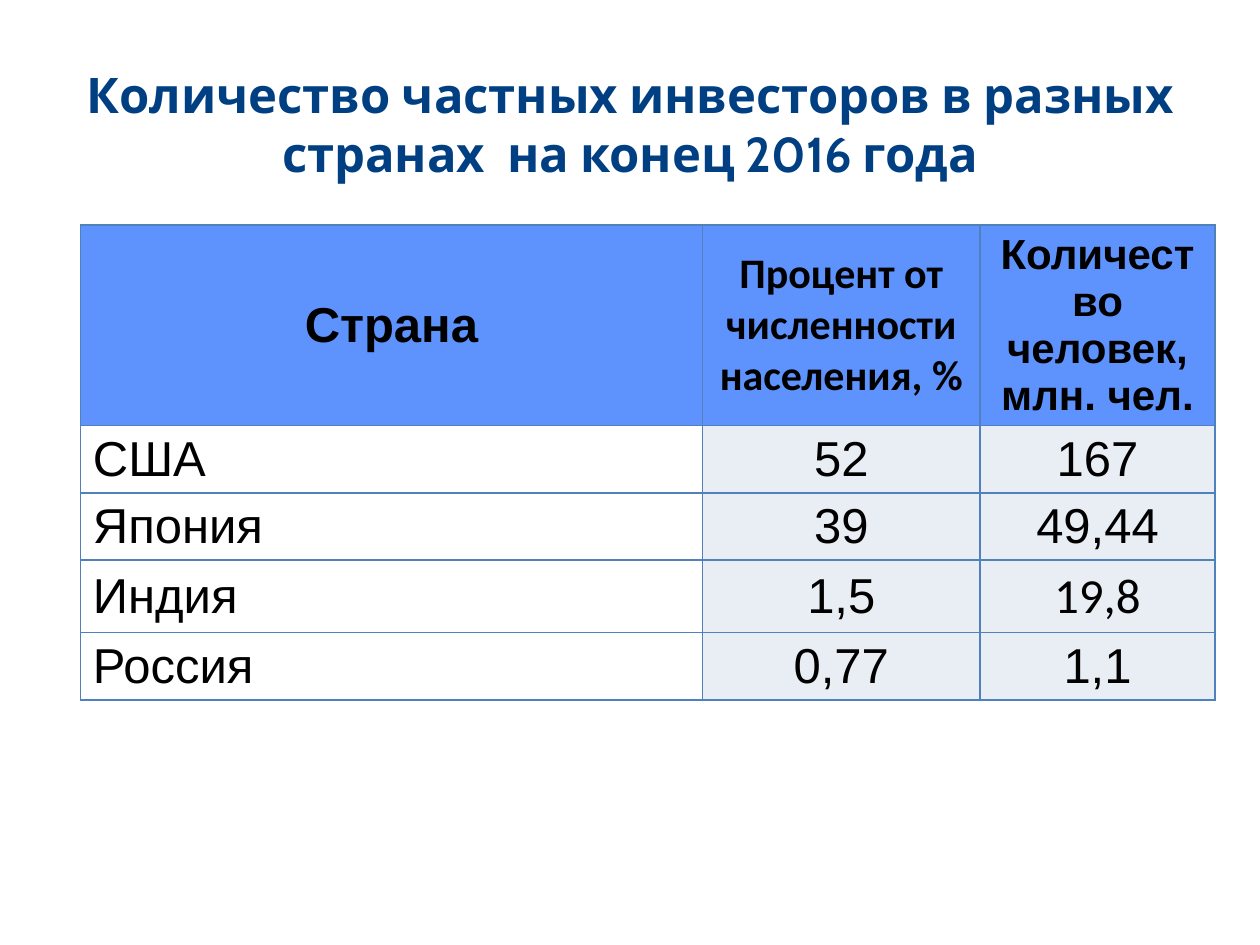
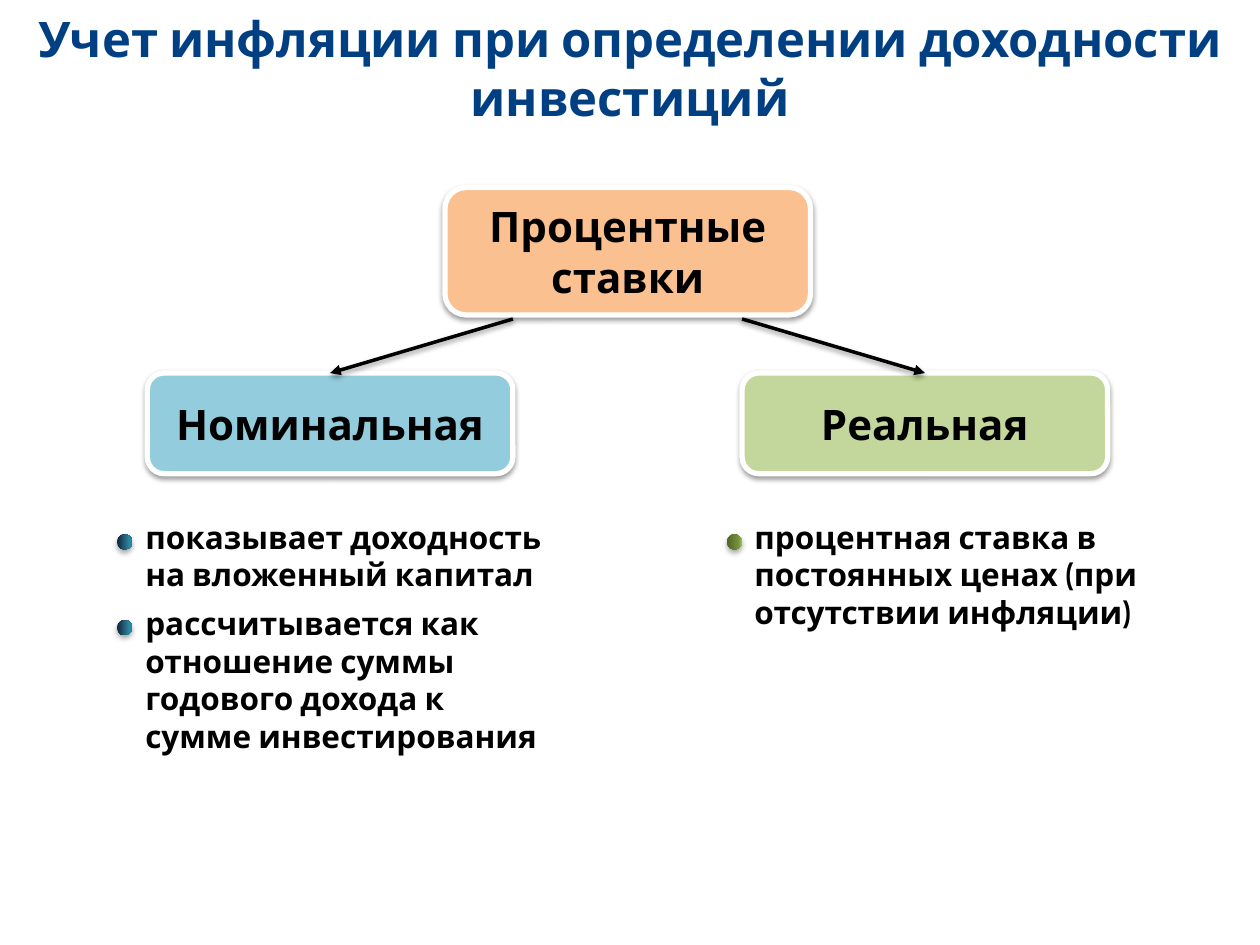
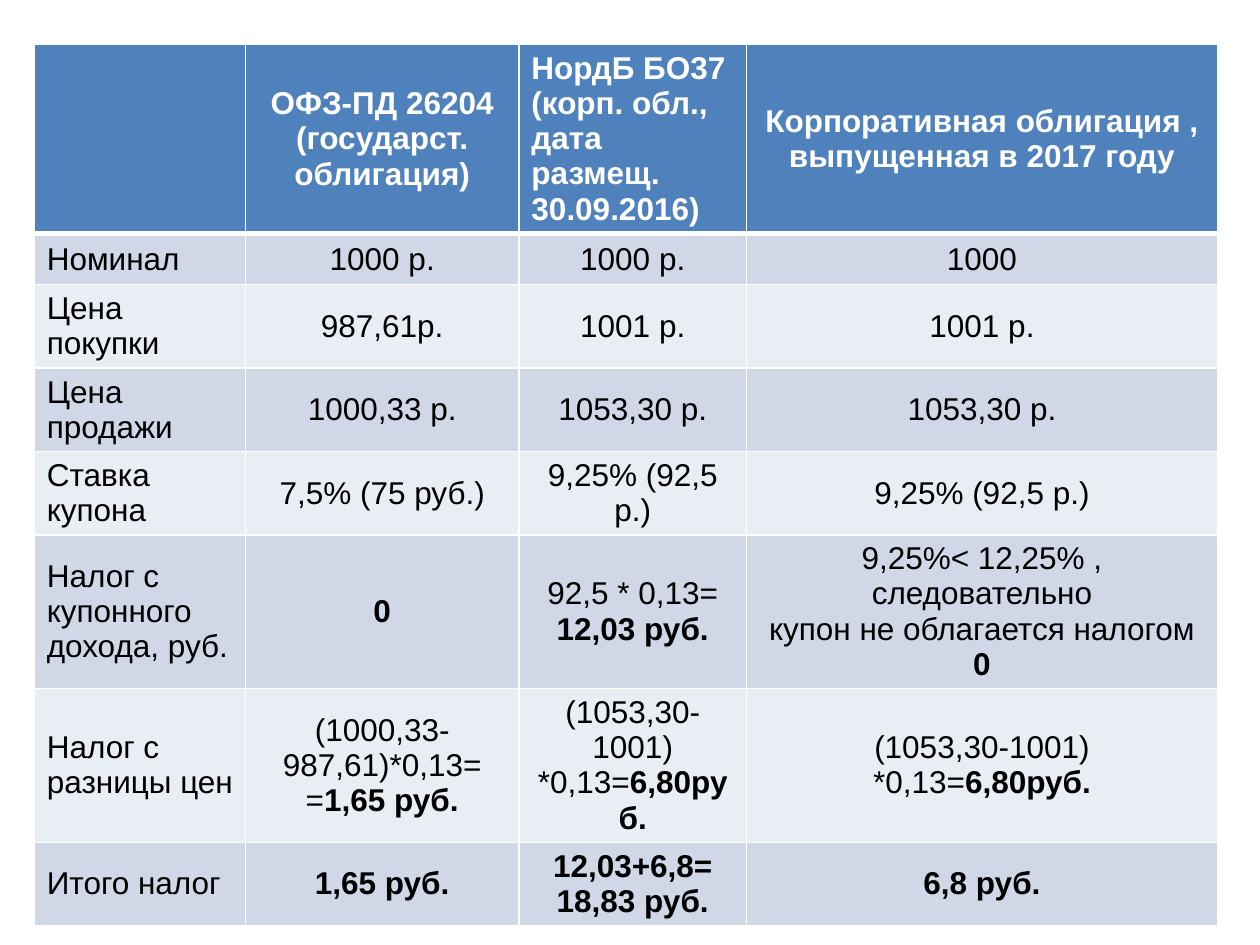
from dataclasses import dataclass

from lxml import etree
from pptx import Presentation
from pptx.dml.color import RGBColor
from pptx.enum.shapes import MSO_CONNECTOR, MSO_SHAPE
from pptx.enum.text import MSO_ANCHOR, MSO_AUTO_SIZE, PP_ALIGN
from pptx.oxml.ns import qn
from pptx.util import Cm, Pt

LEFT, CENTER = PP_ALIGN.LEFT, PP_ALIGN.CENTER
TOP, MIDDLE = MSO_ANCHOR.TOP, MSO_ANCHOR.MIDDLE
NO_AUTOFIT = MSO_AUTO_SIZE.NONE
ROUNDED, OVAL = MSO_SHAPE.ROUNDED_RECTANGLE, MSO_SHAPE.OVAL
STRAIGHT = MSO_CONNECTOR.STRAIGHT
TITLE_ONLY, BLANK = 5, 6
TOP_SIDE = 0
BOLD_MARK = "|"


@dataclass(frozen=True)
class Theme:
    title_font: str = "Cabin"
    table_font: str = "Arial"
    accent_font: str = "Calibri"
    title_size: int = 28
    box_size: int = 24
    text_size: int = 18
    navy: str = "003F82"
    black: str = "000000"
    white: str = "FFFFFF"
    header: str = "5E93FE"
    blue: str = "4F81BD"
    band: str = "D0D8E8"
    pale: str = "E9EDF4"
    orange: str = "FAC090"
    aqua: str = "93CDDD"
    green: str = "C3D69B"
    aqua_dot: tuple = ((0, "0F243E"), (80, "31859C"), (100, "038CC9"))
    green_dot: tuple = ((0, "4F6228"), (80, "77933C"), (100, "92D050"))


def rgb(value):
    return RGBColor.from_string(value)


def child(parent, tag, **attributes):
    return etree.SubElement(parent, qn(tag), {k: str(v) for k, v in attributes.items()})


class Deck:
    def __init__(self, theme):
        self.theme = theme
        self.presentation = Presentation()
        self.presentation.slide_width = Cm(25.4)
        self.presentation.slide_height = Cm(19.05)
        self.slide = None

    def new_slide(self, layout):
        self.slide = self.presentation.slides.add_slide(
            self.presentation.slide_layouts[layout])

    def put_text(self, frame, text, align=LEFT, after=0, color=None, **style):
        look = {"name": self.theme.title_font, "size": self.theme.text_size,
                "bold": True, **style}
        look["size"] = Pt(look["size"])
        for index, line in enumerate(text.split("\n")):
            paragraph = frame.paragraphs[0] if index == 0 else frame.add_paragraph()
            paragraph.alignment = align
            if after:
                paragraph.space_after = Pt(after)
            for part, words in enumerate(line.split(BOLD_MARK)):
                if not words:
                    continue
                run = paragraph.add_run()
                run.text = words
                for name, value in look.items():
                    setattr(run.font, name, value)
                if part % 2:
                    run.font.bold = True
                run.font.color.rgb = rgb(color or self.theme.black)

    def title(self, text, top):
        heading = self.slide.shapes.title
        place = {"left": 0, "top": Cm(top), "width": Cm(25.4), "height": Cm(2.7)}
        for name, value in place.items():
            setattr(heading, name, value)
        frame = heading.text_frame
        layout = {"vertical_anchor": TOP, "auto_size": NO_AUTOFIT, "word_wrap": True}
        for name, value in layout.items():
            setattr(frame, name, value)
        self.put_text(frame, text, CENTER, color=self.theme.navy, size=self.theme.title_size)

    def shadow(self, shape, opacity=38, distance=1.6):
        properties = shape._element.spPr
        for old in properties.findall(qn("a:effectLst")):
            properties.remove(old)
        outer = child(child(properties, "a:effectLst"), "a:outerShdw",
                      blurRad=Pt(3.1), dist=Pt(distance), dir=90 * 60000, rotWithShape=0)
        child(child(outer, "a:srgbClr", val=self.theme.black), "a:alpha", val=opacity * 1000)

    def box(self, text, left, top, height, fill):
        box = self.slide.shapes.add_shape(ROUNDED, Cm(left), Cm(top), Cm(7.37), Cm(height))
        box.fill.solid()
        box.fill.fore_color.rgb = rgb(fill)
        box.line.color.rgb = rgb(self.theme.white)
        box.line.width = Pt(3)
        self.shadow(box)
        box.text_frame.word_wrap = True
        box.text_frame.vertical_anchor = MIDDLE
        self.put_text(box.text_frame, text, CENTER, size=self.theme.box_size)
        return box

    def arrow(self, left, top, target):
        arrow = self.slide.shapes.add_connector(
            STRAIGHT, Cm(left), Cm(top), target.left, target.top)
        arrow.end_connect(target, TOP_SIDE)
        arrow.line.color.rgb = rgb(self.theme.black)
        arrow.line.width = Pt(2)
        child(arrow.line._get_or_add_ln(), "a:tailEnd", type="triangle")
        self.shadow(arrow)

    def text(self, text, left, top, width, height):
        frame = self.slide.shapes.add_textbox(
            Cm(left), Cm(top), Cm(width), Cm(height)).text_frame
        frame.word_wrap = True
        self.put_text(frame, text, after=6)

    def dot(self, left, top, stops):
        dot = self.slide.shapes.add_shape(OVAL, Cm(left), Cm(top), Cm(0.31), Cm(0.31))
        dot.line.fill.background()
        dot.fill.gradient()
        dot.fill.gradient_angle = 0
        stop_list = dot._element.spPr.find(qn("a:gradFill")).find(qn("a:gsLst"))
        for old in list(stop_list):
            stop_list.remove(old)
        for position, color in stops:
            child(child(stop_list, "a:gs", pos=position * 1000), "a:srgbClr", val=color)
        self.shadow(dot, opacity=35, distance=1.8)

    def table(self, left, top, widths, heights):
        table = self.slide.shapes.add_table(
            len(heights), len(widths), Cm(left), Cm(top),
            Cm(sum(widths)), Cm(sum(heights))).table
        table.horz_banding = False
        for column, width in zip(table.columns, widths):
            column.width = Cm(width)
        for row, height in zip(table.rows, heights):
            row.height = Cm(height)
        return table

    def cell(self, cell, text, fill, border, align=CENTER, anchor=MIDDLE, bottom=1, **style):
        properties = cell._tc.get_or_add_tcPr()
        for side, width in (("L", 1), ("R", 1), ("T", 1), ("B", bottom)):
            line = child(properties, f"a:ln{side}", w=Pt(width))
            child(child(line, "a:solidFill"), "a:srgbClr", val=border)
        if fill:
            cell.fill.solid()
            cell.fill.fore_color.rgb = rgb(fill)
        else:
            cell.fill.background()
        cell.vertical_anchor = anchor
        self.put_text(cell.text_frame, text, align, **{"name": self.theme.table_font, **style})


def investors(deck):
    theme = deck.theme
    deck.new_slide(TITLE_ONLY)
    deck.title("Количество частных инвесторов в разных странах  на конец 2016 года", 1.17)
    headings = [("Страна", theme.table_font, theme.title_size),
                ("Процент от численности населения, %", theme.accent_font, theme.box_size),
                ("Количество человек, млн. чел.", theme.table_font, theme.box_size)]
    countries = [("США", "52", "167"), ("Япония", "39", "49,44"),
                 ("Индия", "1,5", "19,8"), ("Россия", "0,77", "1,1")]
    table = deck.table(1.62, 4.54, [12.54, 5.6, 4.73], [4.04, 1.35, 1.35, 1.46, 1.35])
    for column, (heading, font, size) in enumerate(headings):
        deck.cell(table.cell(0, column), heading, theme.header, theme.blue,
                  name=font, size=size)
    for row, country in enumerate(countries, 1):
        for column, value in enumerate(country):
            deck.cell(table.cell(row, column), value,
                      theme.pale if column else None, theme.blue,
                      CENTER if column else LEFT, size=theme.title_size, bold=False,
                      name=theme.accent_font if value == "19,8" else theme.table_font)


def interest_rates(deck):
    theme = deck.theme
    deck.new_slide(TITLE_ONLY)
    deck.title("Учет инфляции при определении доходности инвестиций", 0.05)
    deck.box("Процентные ставки", 8.97, 3.78, 2.57, theme.orange)
    nominal = deck.box("Номинальная", 2.97, 7.52, 2.03, theme.aqua)
    real = deck.box("Реальная", 14.96, 7.52, 2.03, theme.green)
    deck.arrow(10.34, 6.43, nominal)
    deck.arrow(14.96, 6.43, real)
    deck.text("показывает доходность на вложенный капитал\n"
              "рассчитывается как отношение суммы годового дохода к сумме инвестирования",
              2.68, 10.31, 8.51, 5.18)
    deck.text("процентная ставка в постоянных ценах (при отсутствии инфляции)",
              14.96, 10.31, 9.04, 5.18)
    for left, top, stops in ((2.36, 10.77, theme.aqua_dot), (2.36, 12.5, theme.aqua_dot),
                             (14.65, 10.77, theme.green_dot)):
        deck.dot(left, top, stops)


def bond_taxes(deck):
    theme = deck.theme
    deck.new_slide(BLANK)
    bonds = ["", "ОФЗ-ПД 26204 (государст. облигация)",
             "НордБ БО37\n(корп. обл., дата размещ.\n30.09.2016)",
             "Корпоративная облигация , выпущенная в 2017 году"]
    price_tax = "(1053,30-1001)\n*0,13=|6,80руб.|"
    lines = [
        ("Номинал", "1000 р.", "1000 р.", "1000"),
        ("Цена покупки", "987,61р.", "1001 р.", "1001 р."),
        ("Цена продажи", "1000,33 р.", "1053,30 р.", "1053,30 р."),
        ("Ставка купона", "7,5% (75 руб.)", "9,25% (92,5 р.)", "9,25% (92,5 р.)"),
        ("Налог с купонного дохода, руб.", "|0|", "92,5 * 0,13= |12,03 руб.|",
         "9,25%< 12,25% , следовательно\nкупон не облагается налогом\n|0|"),
        ("Налог с разницы цен", "(1000,33-987,61)*0,13=\n=|1,65 руб.|",
         price_tax, price_tax),
        ("Итого налог", "|1,65 руб.|", "|12,03+6,8=|\n|18,83 руб.|", "|6,8 руб.|"),
    ]
    table = deck.table(0.69, 0.89, [4.26, 5.51, 4.59, 9.49],
                       [3.82, 1.03, 1.68, 1.68, 1.68, 3.1, 3.1, 1.68])
    for column, bond in enumerate(bonds):
        dated = column == 2
        deck.cell(table.cell(0, column), bond, theme.blue, theme.white,
                  LEFT if dated else CENTER, TOP if dated else MIDDLE,
                  bottom=3, color=theme.white)
    for row, line in enumerate(lines, 1):
        for column, value in enumerate(line):
            deck.cell(table.cell(row, column), value,
                      theme.band if row % 2 else theme.pale, theme.white,
                      CENTER if column else LEFT, bold=False)


def main():
    deck = Deck(Theme())
    investors(deck)
    interest_rates(deck)
    bond_taxes(deck)
    deck.presentation.save("out.pptx")


if __name__ == "__main__":
    main()
